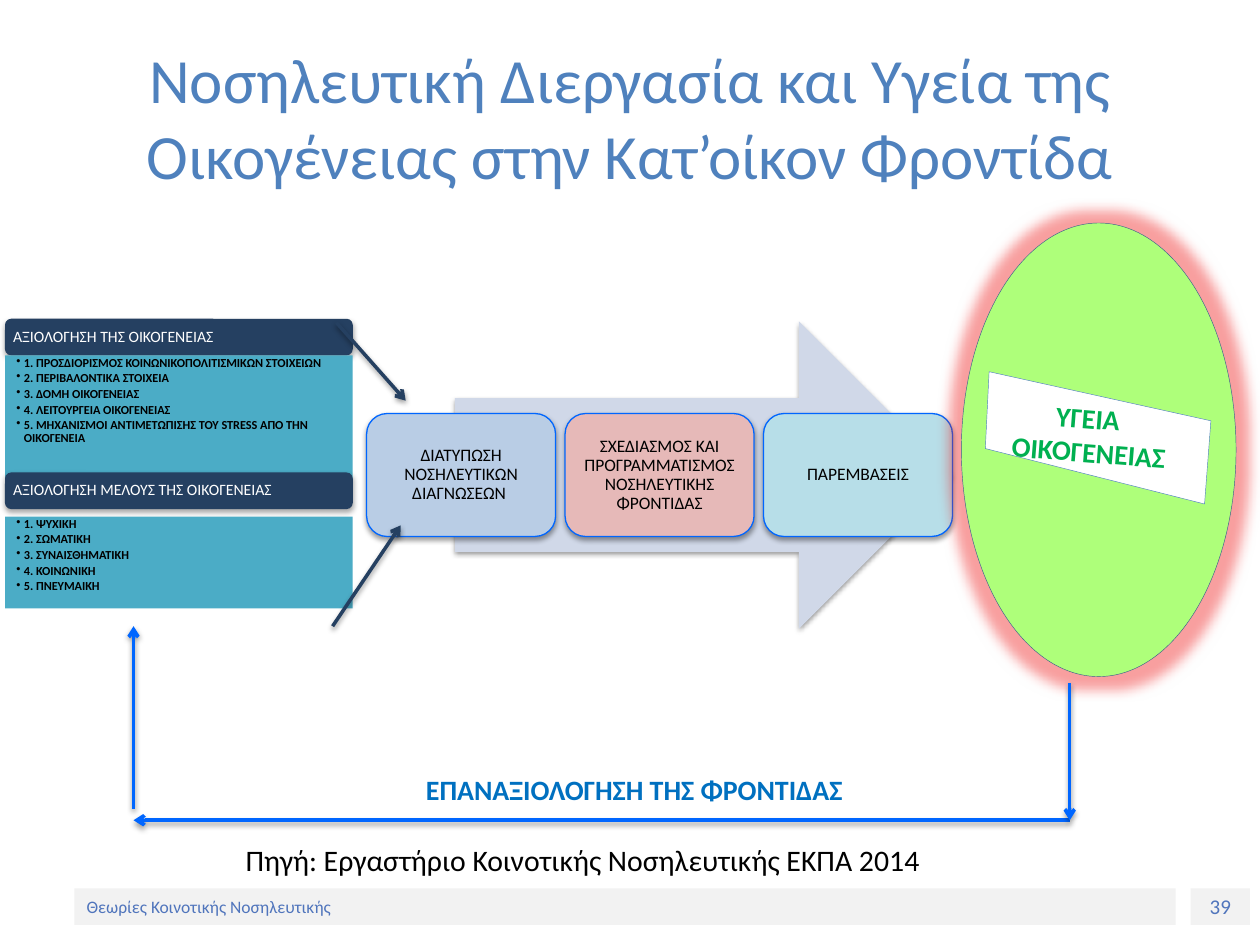
import pptx
import pptx.util
import pptx.dml.color
import pptx.enum.shapes
import pptx.enum.text
import pptx.oxml
import pptx.oxml.ns

Inches = pptx.util.Inches
Pt = pptx.util.Pt
SHAPE = pptx.enum.shapes.MSO_SHAPE
ALIGN = pptx.enum.text.PP_ALIGN
ANCHOR = pptx.enum.text.MSO_ANCHOR
NS = pptx.oxml.ns.nsdecls("a")
BLUE, NAVY = "0066FF", "254061"


def rgb(value):
    return pptx.dml.color.RGBColor.from_string(value)


def add_xml(parent, xml):
    parent.append(pptx.oxml.parse_xml(xml))


def add_effect(sp, effect):
    add_xml(sp._element.spPr, f"<a:effectLst {NS}>{effect}</a:effectLst>")


def add_shadow(sp, alpha=38):
    add_effect(sp, f'<a:outerShdw blurRad="{Pt(3.1)}" dist="{Pt(1.6)}" dir="5400000" rotWithShape="0">'
                   f'<a:srgbClr val="000000"><a:alpha val="{alpha * 1000}"/></a:srgbClr></a:outerShdw>')


def paint(sp, fill, line=None, width=0.75):
    sp.fill.solid()
    sp.fill.fore_color.rgb = rgb(fill)
    if line:
        sp.line.color.rgb = rgb(line)
        sp.line.width = Pt(width)
    else:
        sp.line.fill.background()


def add_box(s, kind, box, fill, line=None, shadow=0):
    sp = s.shapes.add_shape(kind, *map(Inches, box))
    paint(sp, fill, line)
    if shadow:
        add_shadow(sp, shadow)
    else:
        sp.shadow.inherit = False
    return sp


def write(sp, lines, size, color, bold=False, align=ALIGN.LEFT, anchor=ANCHOR.MIDDLE,
          inset=(0.1, 0.05, 0.1, 0.05), spacing=None, after=0, wrap=True):
    tf = sp.text_frame
    tf.word_wrap = wrap
    tf.vertical_anchor = anchor
    tf.margin_left, tf.margin_top, tf.margin_right, tf.margin_bottom = map(Inches, inset)
    tf.text = "\n".join(lines)
    for p in tf.paragraphs:
        p.alignment = align
        p.line_spacing = spacing
        p.space_after = Pt(after)
        p.font.name = "Calibri"
        p.font.size = Pt(size)
        p.font.bold = bold
        p.font.color.rgb = rgb(color)


def set_bullet(p, indent, bullet):
    pPr = p._p.get_or_add_pPr()
    pPr.set("marL", str(Inches(indent)))
    pPr.set("indent", str(-Inches(indent)))
    mark = f'<a:buChar {NS} char="{bullet}"/>' if bullet else f"<a:buNone {NS}/>"
    pPr.insert_element_before(pptx.oxml.parse_xml(mark), "a:tabLst", "a:defRPr", "a:extLst")


def add_arrow(s, start, end, color):
    c = s.shapes.add_connector(pptx.enum.shapes.MSO_CONNECTOR.STRAIGHT,
                               *map(Inches, (*start, *end)))
    c.line.color.rgb = rgb(color)
    c.line.width = Pt(2)
    add_xml(c.line._get_or_add_ln(), f'<a:tailEnd {NS} type="arrow"/>')
    add_shadow(c)


def place(sp, box):
    sp.left, sp.top, sp.width, sp.height = map(Inches, box)


def add_headings(s, title_box, source_box):
    title, source = s.shapes.title, s.placeholders[1]
    place(title, title_box)
    write(title, ["Νοσηλευτική Διεργασία και Υγεία της Οικογένειας στην Κατ’οίκον Φροντίδα"],
          36, "4F81BD", align=ALIGN.CENTER)
    place(source, source_box)
    write(source, ["Πηγή: Εργαστήριο Κοινοτικής Νοσηλευτικής ΕΚΠΑ 2014"], 17, "000000",
          anchor=ANCHOR.TOP)
    p = source.text_frame.paragraphs[0]
    p.space_before = Pt(3.4)
    set_bullet(p, 0, None)


def add_footer(s, box):
    x, y, w, h = box
    number_w = 0.47
    number = add_box(s, SHAPE.RECTANGLE, (x + w - number_w, y, number_w, h), "F2F2F2")
    write(number, ["39"], 12, "5075BC", align=ALIGN.CENTER, inset=(0, 0, 0, 0))
    label = add_box(s, SHAPE.RECTANGLE, (x, y, w - number_w - 0.12, h), "F2F2F2")
    write(label, ["Θεωρίες Κοινοτικής Νοσηλευτικής"], 10, "5075BC")


def add_process(s, box):
    x, y, w, h = box
    arrow_x = x + 0.7
    add_box(s, SHAPE.RIGHT_ARROW, (arrow_x, y, x + w - arrow_x, h), "D0D8E8", shadow=38)
    steps = [("ΔΙΑΤΥΠΩΣΗ ΝΟΣΗΛΕΥΤΙΚΩΝ ΔΙΑΓΝΩΣΕΩΝ ", "B9CDE5"),
             ("ΣΧΕΔΙΑΣΜΟΣ ΚΑΙ ΠΡΟΓΡΑΜΜΑΤΙΣΜΟΣ ΝΟΣΗΛΕΥΤΙΚΗΣ ΦΡΟΝΤΙΔΑΣ", "E6B9B8"),
             ("ΠΑΡΕΜΒΑΣΕΙΣ", "B7DEE8")]
    step_w, step_h = 1.5, 0.4 * h
    pitch = (w - step_w) / (len(steps) - 1)
    for i, (text, fill) in enumerate(steps):
        sp = add_box(s, SHAPE.ROUNDED_RECTANGLE,
                     (x + i * pitch, y + 0.3 * h, step_w, step_h), fill, BLUE, 38)
        write(sp, [text], 10, "000000", align=ALIGN.CENTER, inset=(0.04,) * 4, spacing=0.9)


def add_outcome(s, box):
    x, y, w, h = box
    oval = add_box(s, SHAPE.OVAL, box, "AEFF7A", "3A5F8C", 1)
    oval.line.width = Pt(0.25)
    effects = oval._element.spPr.find(pptx.oxml.ns.qn("a:effectLst"))
    oval._element.spPr.remove(effects)
    add_effect(oval, f'<a:glow rad="{Pt(14)}"><a:srgbClr val="EE1111">'
                     '<a:alpha val="40000"/></a:srgbClr></a:glow>')
    corners = [(0.22, 1.18), (1.98, 1.57), (1.93, 2.23), (0.19, 1.79)]
    points = [(Inches(x + dx), Inches(y + dy)) for dx, dy in corners]
    fb = s.shapes.build_freeform(*points[0])
    fb.add_line_segments(points[1:])
    banner = fb.convert_to_shape()
    paint(banner, "FFFFFF", "4F81BD", 0.25)
    banner.shadow.inherit = False
    label = s.shapes.add_textbox(*map(Inches, (x + 0.12, y + 1.36, 1.8, 0.64)))
    label.rotation = 4.5
    write(label, ["ΥΓΕΙΑ ", "ΟΙΚΟΓΕΝΕΙΑΣ"], 16, "00B050", True, ALIGN.CENTER)


def add_assessment(s, box, heading, items, body_gap, body_h):
    x, y, w, h = box
    head = add_box(s, SHAPE.ROUNDED_RECTANGLE, box, NAVY, shadow=35)
    write(head, [heading], 9, "FFFFFF", inset=(0.05, 0.04, 0.05, 0.04), spacing=0.9)
    body = add_box(s, SHAPE.RECTANGLE, (x, y + h + body_gap, w, body_h), "4BACC6")
    lines = [f"{i}. {item}" for i, item in enumerate(items, 1)]
    write(body, lines, 7, "000000", True, anchor=ANCHOR.TOP,
          inset=(0.09, 0.01, 0.07, 0.01), spacing=0.9, after=1.4)
    for p in body.text_frame.paragraphs:
        set_bullet(p, 0.06, "•")


def add_feedback(s, box):
    x, y, w, h = box
    right, bottom = x + w, y + h
    add_arrow(s, (right, bottom), (x, bottom), BLUE)
    add_arrow(s, (x, bottom - 0.09), (x, y), BLUE)
    add_arrow(s, (right, y + 0.45), (right, bottom), BLUE)
    label = s.shapes.add_textbox(*map(Inches, (x + 2.2, bottom - 0.43, 3.55, 0.37)))
    write(label, ["ΕΠΑΝΑΞΙΟΛΟΓΗΣΗ ΤΗΣ ΦΡΟΝΤΙΔΑΣ"], 16, "0070C0", True, ALIGN.CENTER, wrap=False)


def main():
    prs = pptx.Presentation()
    prs.slide_width, prs.slide_height = Inches(10), Inches(7.5)
    s = prs.slides.add_slide(prs.slide_layouts[1])
    add_headings(s, (0.5, 0.3, 9, 1.25), (1.85, 6.63, 6, 0.39))
    add_footer(s, (0.59, 7.05, 9.33, 0.29))
    add_process(s, (2.91, 2.55, 4.65, 2.44))
    add_outcome(s, (7.63, 1.77, 2.18, 3.6))
    add_assessment(s, (0.04, 2.53, 2.76, 0.29), "ΑΞΙΟΛΟΓΗΣΗ ΤΗΣ ΟΙΚΟΓΕΝΕΙΑΣ",
                   ["ΠΡΟΣΔΙΟΡΙΣΜΟΣ ΚΟΙΝΩΝΙΚΟΠΟΛΙΤΙΣΜΙΚΩΝ ΣΤΟΙΧΕΙΩΝ", "ΠΕΡΙΒΑΛΟΝΤΙΚΑ ΣΤΟΙΧΕΙΑ",
                    "ΔΟΜΗ ΟΙΚΟΓΕΝΕΙΑΣ", "ΛΕΙΤΟΥΡΓΕΙΑ ΟΙΚΟΓΕΝΕΙΑΣ",
                    "ΜΗΧΑΝΙΣΜΟΙ ΑΝΤΙΜΕΤΩΠΙΣΗΣ ΤΟΥ STRESS ΑΠΌ ΤΗΝ ΟΙΚΟΓENEIA"], 0, 1.12)
    add_assessment(s, (0.04, 3.75, 2.76, 0.29), "ΑΞΙΟΛΟΓΗΣΗ ΜΕΛΟΥΣ ΤΗΣ ΟΙΚΟΓΕΝΕΙΑΣ",
                   ["ΨΥΧΙΚΗ", "ΣΩΜΑΤΙΚΗ", "ΣΥΝΑΙΣΘΗΜΑΤΙΚΗ", "ΚΟΙΝΩΝΙΚΗ", "ΠΝΕΥΜΑΙΚΗ"], 0.06, 0.73)
    add_feedback(s, (1.06, 4.97, 7.43, 1.54))
    add_arrow(s, (2.67, 2.56), (3.22, 3.18), NAVY)
    add_arrow(s, (2.64, 4.97), (3.18, 4.17), NAVY)
    prs.save("out.pptx")


if __name__ == "__main__":
    main()
